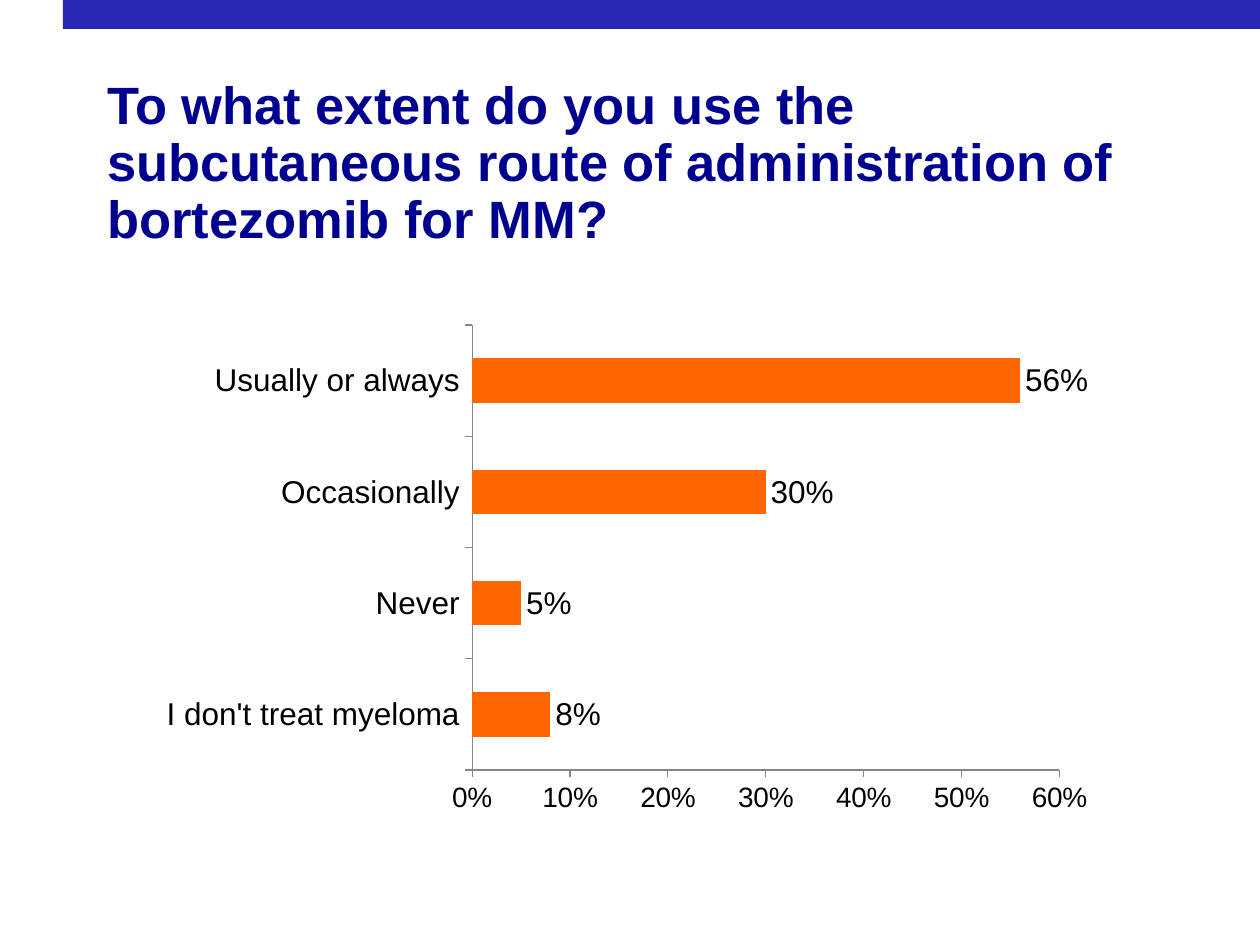
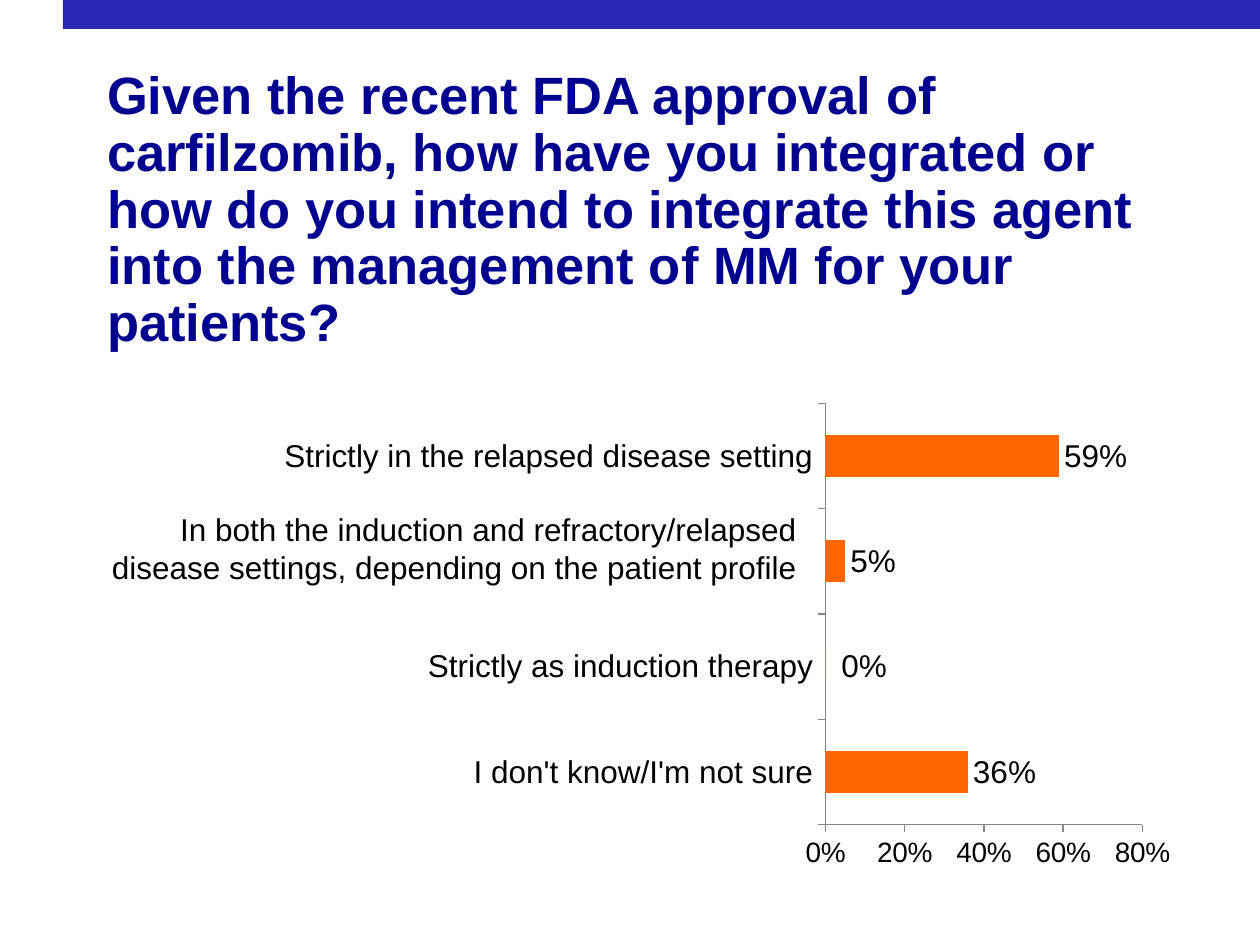
from dataclasses import dataclass
from typing import Any

from pptx import Presentation
from pptx.chart.data import CategoryChartData
from pptx.dml.color import RGBColor
from pptx.enum import chart as charts, shapes, text
from pptx.oxml import parse_xml
from pptx.oxml.ns import nsdecls
from pptx.util import Inches, Pt

BAND, NAVY, ORANGE, BLACK, GRAY = "2727B3", "000090", "FF6600", "000000", "868686"
FONT = "Arial"


@dataclass
class Box:
    left: float
    top: float
    width: float
    height: float

    def lengths(self) -> list[int]:
        return [Inches(side) for side in (self.left, self.top, self.width, self.height)]


@dataclass
class Label:
    wording: str
    box: Box
    alignment: Any = text.PP_ALIGN.LEFT


@dataclass
class Survey:
    question: str
    title_box: Box
    chart_box: Box
    answers: dict[str, float]
    axis_maximum: float
    axis_step: float
    plot_area: Box | None = None  # fractions of the chart
    labels: tuple[Label, ...] = ()


SURVEYS = [
    Survey(
        "To what extent do you use the subcutaneous route of administration "
        "of bortezomib for MM?",
        Box(0.75, 0.58, 8.5, 2.33),
        Box(1.17, 2.5, 7.61, 4.03),
        {"I don't treat myeloma": 0.08, "Never": 0.05,
         "Occasionally": 0.3, "Usually or always": 0.56},
        0.6, 0.1,
    ),
    Survey(
        "Given the recent FDA approval of carfilzomib, how have you integrated "
        "or how do you intend to integrate this agent into the management of MM "
        "for your patients?",
        Box(0.75, 0.5, 8.5, 2.42),
        Box(0.83, 3, 8.67, 4.03),
        {"I don't know/I'm not sure": 0.36, "Strictly as induction therapy": 0,
         "": 0.05, "Strictly in the relapsed disease setting": 0.59},
        0.8, 0.2,
        Box(0.66, 0.05, 0.29, 0.83),
        (
            Label("In both the induction and refractory/relapsed\n"
                  "disease settings, depending on the patient profile",
                  Box(0.67, 4, 5.75, 0.71), text.PP_ALIGN.RIGHT),
            Label("0%", Box(6.58, 5.08, 0.67, 0.4)),
        ),
    ),
]


def rgb(color: str) -> RGBColor:
    return RGBColor.from_string(color)


def apply(target: Any, formats: dict[str, Any]) -> None:
    for name, value in formats.items():
        setattr(target, name, value)


def style_font(font: Any, size: int, color: str = BLACK, bold: bool = False) -> None:
    apply(font, {"name": FONT, "size": Pt(size), "bold": bold})
    font.color.rgb = rgb(color)


def place(shape: Any, box: Box) -> None:
    apply(shape, dict(zip(("left", "top", "width", "height"), box.lengths())))


def add_band(slide: Any) -> None:
    band = slide.shapes.add_shape(
        shapes.MSO_SHAPE.RECTANGLE, *Box(0.5, 0, 9.5, 0.23).lengths())
    band.shadow.inherit = False
    band.fill.solid()
    band.fill.fore_color.rgb = rgb(BAND)
    band.line.fill.background()


def set_title(slide: Any, question: str, box: Box) -> None:
    title = slide.shapes.title
    place(title, box)
    apply(title.text_frame, {
        "text": question, "word_wrap": True,
        "auto_size": text.MSO_AUTO_SIZE.NONE,
        "vertical_anchor": text.MSO_ANCHOR.TOP,
    })
    paragraph = title.text_frame.paragraphs[0]
    apply(paragraph, {"alignment": text.PP_ALIGN.LEFT, "line_spacing": 0.9})
    style_font(paragraph.runs[0].font, 30, NAVY, bold=True)


def set_plot_area(chart: Any, area: Box) -> None:
    """Fix the inner plot area, given as fractions of the chart."""
    plot_area = chart._chartSpace.chart.plotArea
    for layout in plot_area.xpath("c:layout"):
        plot_area.remove(layout)
    sides = {"x": area.left, "y": area.top, "w": area.width, "h": area.height}
    modes = "".join(f'<c:{side}Mode val="edge"/>' for side in "xy")
    values = "".join(f'<c:{side} val="{value}"/>' for side, value in sides.items())
    plot_area.insert(0, parse_xml(
        f'<c:layout {nsdecls("c")}><c:manualLayout><c:layoutTarget val="inner"/>'
        f"{modes}{values}</c:manualLayout></c:layout>"))


def add_bar_chart(slide: Any, survey: Survey) -> None:
    data = CategoryChartData(number_format="0%")
    data.categories = list(survey.answers)
    data.add_series("Series 1", list(survey.answers.values()))
    chart = slide.shapes.add_chart(
        charts.XL_CHART_TYPE.BAR_CLUSTERED, *survey.chart_box.lengths(), data).chart
    apply(chart, {"has_legend": False, "has_title": False})
    style_font(chart.font, 18)

    for axis, size in ((chart.category_axis, 18), (chart.value_axis, 16)):
        apply(axis, {
            "has_major_gridlines": False,
            "major_tick_mark": charts.XL_TICK_MARK.OUTSIDE,
            "minor_tick_mark": charts.XL_TICK_MARK.NONE,
        })
        axis.format.line.color.rgb = rgb(GRAY)
        axis.format.line.width = Pt(0.75)
        style_font(axis.tick_labels.font, size)
    apply(chart.value_axis, {
        "minimum_scale": 0, "maximum_scale": survey.axis_maximum,
        "major_unit": survey.axis_step,
    })
    apply(chart.value_axis.tick_labels,
          {"number_format": "0%", "number_format_is_linked": False})

    plot = chart.plots[0]
    apply(plot, {"gap_width": 150, "vary_by_categories": False})
    series = plot.series[0]
    series.format.fill.solid()
    series.format.fill.fore_color.rgb = rgb(ORANGE)
    # The empty sections of the format hide the label of a zero bar.
    apply(series.data_labels, {
        "show_value": True, "number_format": "0%;;",
        "number_format_is_linked": False,
        "position": charts.XL_LABEL_POSITION.OUTSIDE_END,
    })
    style_font(series.data_labels.font, 18)
    if survey.plot_area:
        set_plot_area(chart, survey.plot_area)


def add_label(slide: Any, label: Label) -> None:
    frame = slide.shapes.add_textbox(*label.box.lengths()).text_frame
    apply(frame, {"word_wrap": True, "auto_size": text.MSO_AUTO_SIZE.SHAPE_TO_FIT_TEXT})
    paragraph = frame.paragraphs[0]
    apply(paragraph, {"text": label.wording, "alignment": label.alignment})
    for run in paragraph.runs:
        style_font(run.font, 18)


def main() -> None:
    presentation = Presentation()
    apply(presentation, {"slide_width": Inches(10), "slide_height": Inches(7.5)})
    title_only = presentation.slide_layouts.get_by_name("Title Only")
    for survey in SURVEYS:
        slide = presentation.slides.add_slide(title_only)
        add_band(slide)
        set_title(slide, survey.question, survey.title_box)
        add_bar_chart(slide, survey)
        for label in survey.labels:
            add_label(slide, label)
    presentation.save("out.pptx")


if __name__ == "__main__":
    main()
